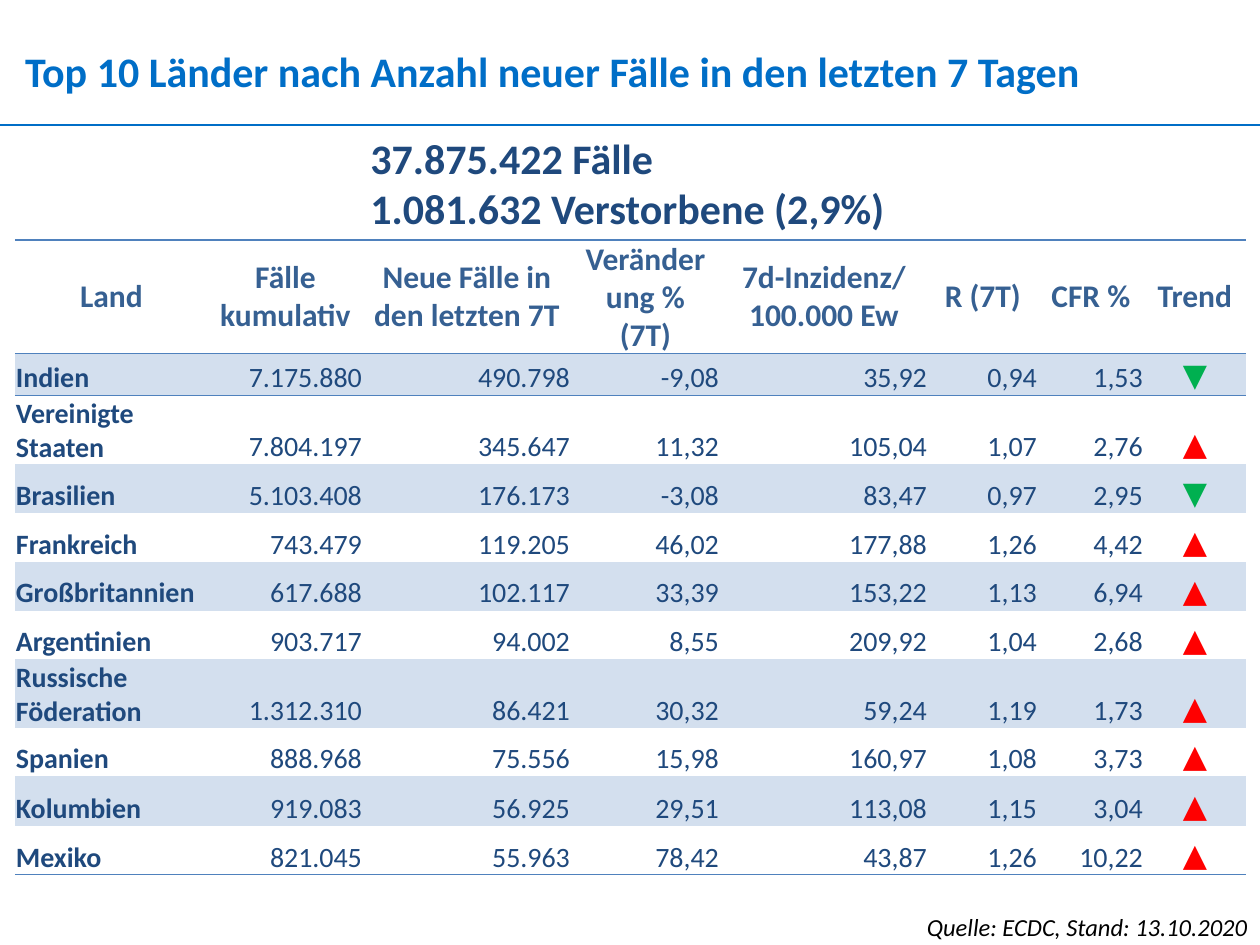
"""Build the slide with the ten countries reporting most new cases in the last 7 days."""
from lxml import etree
from pptx import Presentation
from pptx import util as u
from pptx.dml.color import RGBColor
from pptx.enum import shapes, text
from pptx.oxml.ns import qn

TITLE = "Top 10 Länder nach Anzahl neuer Fälle in den letzten 7 Tagen"
TOTALS = ["37.875.422 Fälle", "1.081.632 Verstorbene (2,9%)"]
SOURCE = "Quelle: ECDC, Stand: 13.10.2020"
HEADINGS = ["Land", "Fälle kumulativ", "Neue Fälle in den letzten 7T", "Veränderung % (7T)",
            "7d-Inzidenz/ 100.000 Ew", "R (7T)", "CFR %", "Trend"]
COUNTRIES = [
    ("Indien", "7.175.880", "490.798", "-9,08", "35,92", "0,94", "1,53"),
    ("Vereinigte Staaten", "7.804.197", "345.647", "11,32", "105,04", "1,07", "2,76"),
    ("Brasilien", "5.103.408", "176.173", "-3,08", "83,47", "0,97", "2,95"),
    ("Frankreich", "743.479", "119.205", "46,02", "177,88", "1,26", "4,42"),
    ("Großbritannien", "617.688", "102.117", "33,39", "153,22", "1,13", "6,94"),
    ("Argentinien", "903.717", "94.002", "8,55", "209,92", "1,04", "2,68"),
    ("Russische Föderation", "1.312.310", "86.421", "30,32", "59,24", "1,19", "1,73"),
    ("Spanien", "888.968", "75.556", "15,98", "160,97", "1,08", "3,73"),
    ("Kolumbien", "919.083", "56.925", "29,51", "113,08", "1,15", "3,04"),
    ("Mexiko", "821.045", "55.963", "78,42", "43,87", "1,26", "10,22"),
]
COLUMN_WIDTHS = [193, 155, 208, 149, 208, 110, 106, 102]
ROW_HEIGHTS = [110, 42, 67, 49, 49, 49, 49, 49, 48, 50, 49]

FONT = "Calibri"
BLUE = RGBColor(0x00, 0x6E, 0xC7)
NAVY = RGBColor(0x1F, 0x49, 0x7D)
HEADING_BLUE = RGBColor(0x36, 0x60, 0x92)
BORDER = RGBColor(0x4F, 0x81, 0xBD)
BAND = RGBColor(0xD3, 0xDF, 0xEE)
GREEN = RGBColor(0x00, 0xB0, 0x50)
RED = RGBColor(0xFF, 0x00, 0x00)
BLACK = RGBColor(0x00, 0x00, 0x00)
NO_STYLE = "{2D5ABB26-0587-4C30-8999-92F81FD0307C}"
LEFT, CENTER, RIGHT = text.PP_ALIGN.LEFT, text.PP_ALIGN.CENTER, text.PP_ALIGN.RIGHT


def px(length):
    return u.Emu(round(length * 914400 / 126))


def write(frame, lines, size, color, align=LEFT, bold=False, italic=False):
    frame.text = "\n".join(lines)
    for paragraph in frame.paragraphs:
        paragraph.alignment = align
        font = paragraph.font
        font.name, font.size, font.bold, font.italic = FONT, u.Pt(size), bold, italic
        font.color.rgb = color


def set_insets(part, side, top):
    part.margin_left = part.margin_right = px(side)
    part.margin_top, part.margin_bottom = px(top), 0


def add_border(cell, edge):
    line = etree.SubElement(cell._tc.get_or_add_tcPr(), qn(f"a:{edge}"), w=str(u.Pt(1)))
    fill = etree.SubElement(line, qn("a:solidFill"))
    etree.SubElement(fill, qn("a:srgbClr"), val=str(BORDER))


def add_note(slide, box, wrap, lines, **style):
    frame = slide.shapes.add_textbox(*map(px, box)).text_frame
    frame.word_wrap = wrap
    frame.auto_size = text.MSO_AUTO_SIZE.SHAPE_TO_FIT_TEXT
    write(frame, lines, **style)


def cell_style(row, column, value):
    if row == 0:
        return dict(size=18, color=HEADING_BLUE, align=CENTER, bold=True)
    if column == 0:
        return dict(size=16, color=NAVY, bold=True)
    if column == len(HEADINGS) - 1:
        return dict(size=18, color=GREEN if value == "▼" else RED, align=CENTER)
    return dict(size=16, color=NAVY, align=RIGHT)


def add_country_table(slide):
    rows = [HEADINGS] + [(*c, "▼" if c[3].startswith("-") else "▲") for c in COUNTRIES]
    table = slide.shapes.add_table(len(rows), len(HEADINGS), px(15), px(240),
                                   px(sum(COLUMN_WIDTHS)), px(sum(ROW_HEIGHTS))).table
    table.first_row = table.horz_banding = False
    table._tbl.tblPr.find(qn("a:tableStyleId")).text = NO_STYLE
    for column, width in zip(table.columns, COLUMN_WIDTHS):
        column.width = px(width)
    for table_row, height in zip(table.rows, ROW_HEIGHTS):
        table_row.height = px(height)
    for r, values in enumerate(rows):
        for c, value in enumerate(values):
            cell = table.cell(r, c)
            write(cell.text_frame, [value], **cell_style(r, c, value))
            cell.vertical_anchor = text.MSO_ANCHOR.BOTTOM if r else text.MSO_ANCHOR.MIDDLE
            set_insets(cell, *((1, 1) if r else (8, 0)))
            if r <= 1:
                add_border(cell, "lnT")
            if r in (0, len(rows) - 1):
                add_border(cell, "lnB")
            if r % 2:
                cell.fill.solid()
                cell.fill.fore_color.rgb = BAND
            else:
                cell.fill.background()


def main():
    deck = Presentation()
    deck.slide_width, deck.slide_height = px(1260), px(945)
    slide = deck.slides.add_slide(deck.slide_layouts[5])

    title = slide.shapes.title
    title.left, title.top, title.width, title.height = map(px, (25, 45, 1213, 50))
    set_insets(title.text_frame, 0, 0)
    title.text_frame.vertical_anchor = text.MSO_ANCHOR.TOP
    write(title.text_frame, [TITLE], size=24, color=BLUE, bold=True)

    rule = slide.shapes.add_connector(shapes.MSO_CONNECTOR.STRAIGHT,
                                      0, px(125), px(1260), px(125))
    rule.line.color.rgb, rule.line.width = BLUE, u.Pt(1.5)
    etree.SubElement(rule._element.spPr, qn("a:effectLst"))

    add_note(slide, (358, 126, 544, 115), False, TOTALS, size=24, color=NAVY, bold=True)
    add_note(slide, (814, 906, 446, 43), True, [SOURCE],
             size=14, color=BLACK, align=RIGHT, italic=True)
    add_country_table(slide)
    deck.save("out.pptx")


if __name__ == "__main__":
    main()
